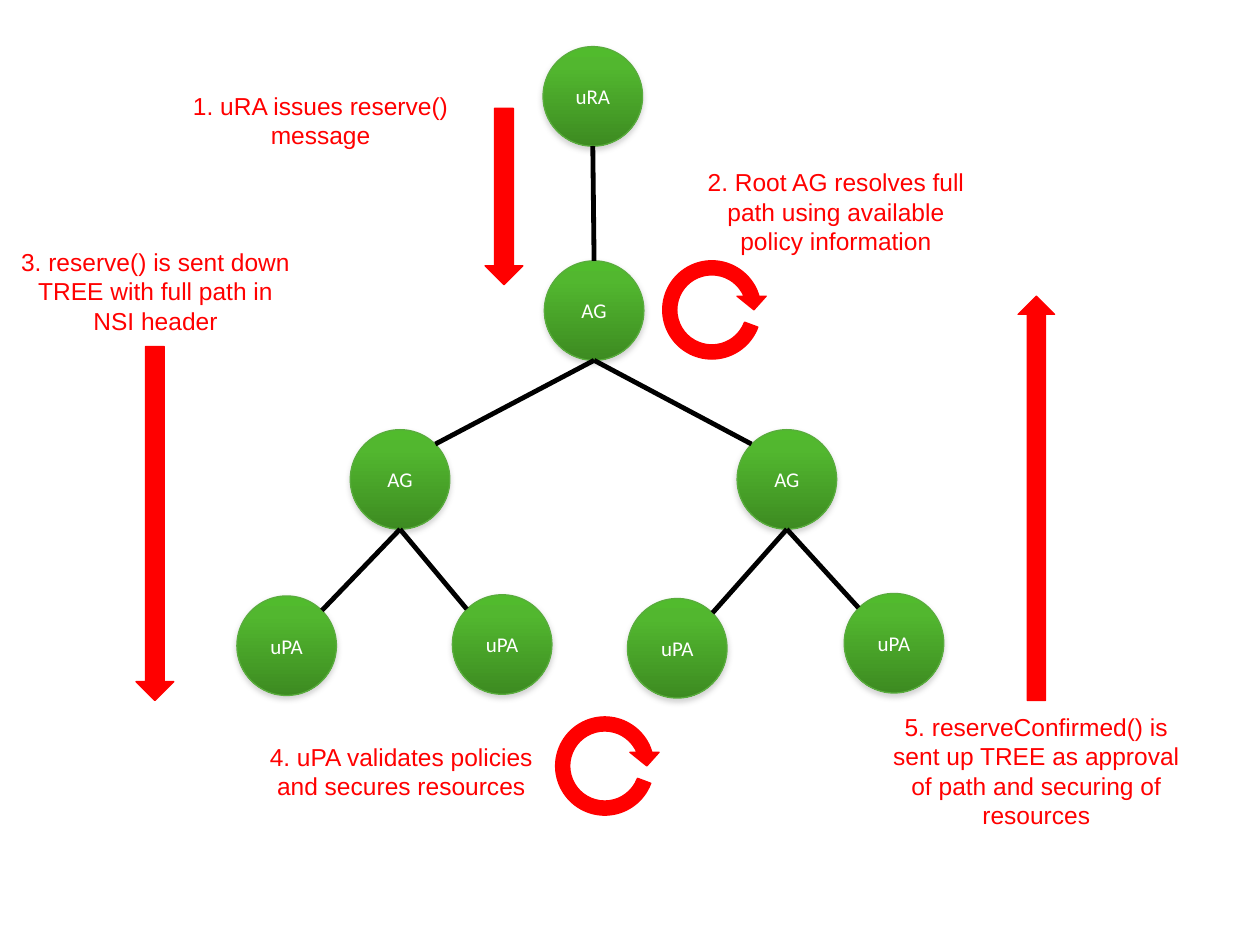
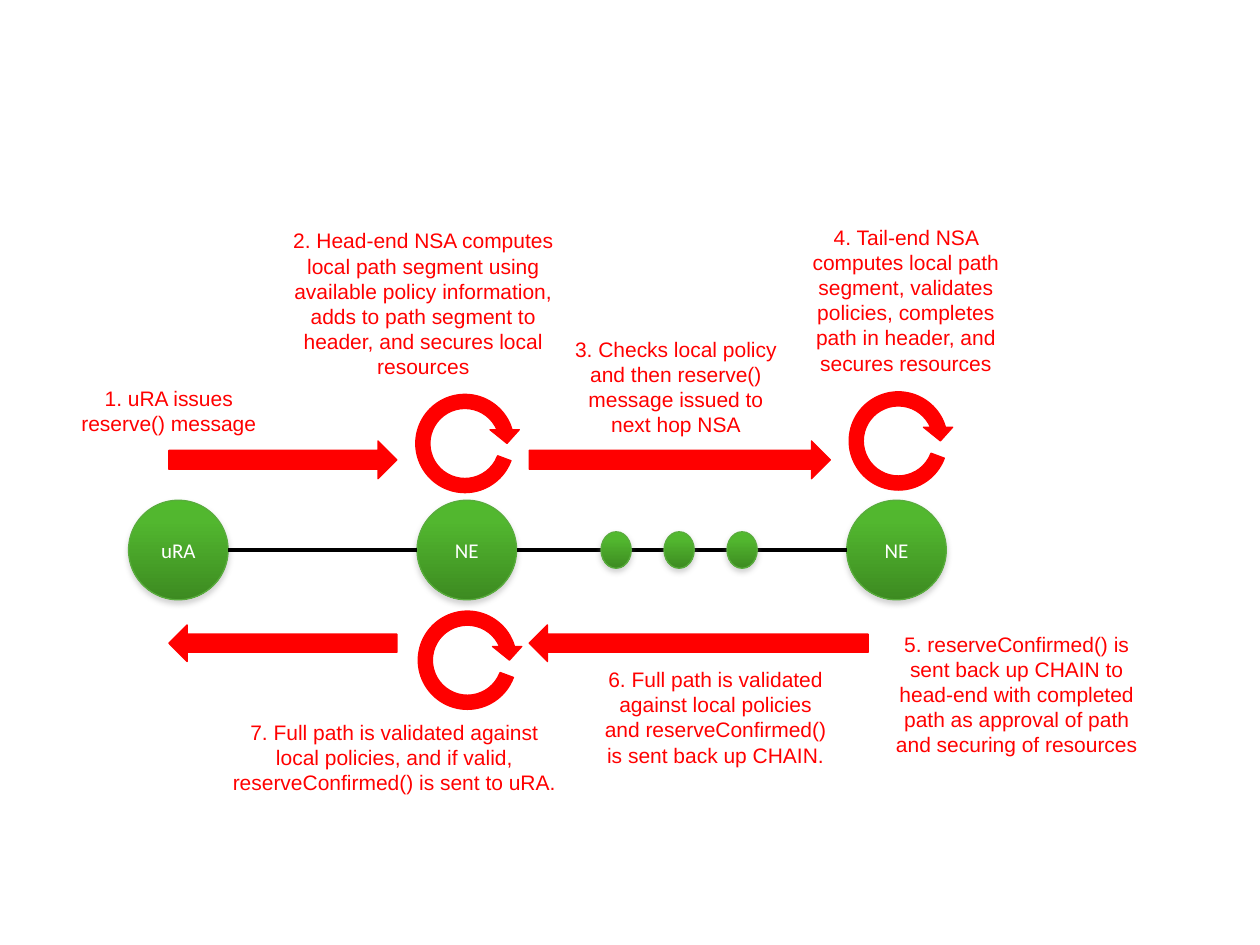
import copy

import lxml.etree
import pptx
import pptx.dml.color
import pptx.enum.shapes
import pptx.enum.text
import pptx.oxml
import pptx.oxml.ns
import pptx.util

Inches = pptx.util.Inches
Pt = pptx.util.Pt
RGBColor = pptx.dml.color.RGBColor
MSO_SHAPE = pptx.enum.shapes.MSO_SHAPE
MSO_CONNECTOR = pptx.enum.shapes.MSO_CONNECTOR
PP_ALIGN = pptx.enum.text.PP_ALIGN
qn = pptx.oxml.ns.qn

RED = RGBColor(0xFF, 0x00, 0x00)
BLACK = RGBColor(0x00, 0x00, 0x00)
WHITE = RGBColor(0xFF, 0xFF, 0xFF)
EDGE = RGBColor(0x59, 0xAC, 0x3D)
GREENS = [
    (0, RGBColor(0x51, 0xBB, 0x2D)),
    (0.2, RGBColor(0x52, 0xB7, 0x2F)),
    (1, RGBColor(0x3D, 0x8B, 0x21)),
]

NODE = 0.79
LOOP = 0.9
DIAG = NODE / 2 * 0.71
LOOP_ADJ = (0.125, 11.423, 204.577, 12.305, 0.129)
SHADOW = (
    f'<a:effectLst {pptx.oxml.ns.nsdecls("a")}>'
    '<a:outerShdw blurRad="40000" dist="23000" dir="5400000" rotWithShape="0">'
    '<a:srgbClr val="808080"><a:alpha val="35000"/></a:srgbClr>'
    '</a:outerShdw></a:effectLst>'
)


def add_shape(slide, kind, x, y, w, h, edge):
    shape = slide.shapes.add_shape(kind, Inches(x), Inches(y), Inches(w), Inches(h))
    shape.line.color.rgb = edge
    shape.line.width = Pt(0.75)
    return shape


def add_ball(slide, x, y, w=NODE, h=NODE):
    """Add a green shaded ellipse with a soft shadow."""
    ball = add_shape(slide, MSO_SHAPE.OVAL, x, y, w, h, EDGE)
    ball.fill.gradient()
    ball.fill.gradient_angle = 270
    props = ball._element.spPr
    stops = props.find(qn("a:gradFill")).find(qn("a:gsLst"))
    stops.insert(1, copy.deepcopy(stops[0]))
    for stop, (place, color) in zip(ball.fill.gradient_stops, GREENS):
        stop.position = place
        stop.color.rgb = color
    props.append(pptx.oxml.parse_xml(SHADOW))
    return ball


def add_node(slide, name, x, y):
    """Add a named ball and return its centre."""
    ball = add_ball(slide, x, y)
    para = ball.text_frame.paragraphs[0]
    para.text = name
    para.alignment = PP_ALIGN.CENTER
    para.font.name = "Calibri"
    para.font.size = Pt(12)
    para.font.color.rgb = WHITE
    return x + NODE / 2, y + NODE / 2


def add_link(slide, start, end):
    ends = [Inches(v) for v in (*start, *end)]
    link = slide.shapes.add_connector(MSO_CONNECTOR.STRAIGHT, *ends)
    link.line.color.rgb = BLACK
    link.line.width = Pt(2.75)
    lxml.etree.SubElement(link._element.spPr, qn("a:effectLst"))


def add_arrow(slide, kind, x, y, w, h, adjust=(0.5, 0.5)):
    arrow = add_shape(slide, kind, x, y, w, h, RED)
    for i, value in enumerate(adjust):
        arrow.adjustments[i] = value
    arrow.fill.solid()
    arrow.fill.fore_color.rgb = RED
    arrow.shadow.inherit = False


def add_loop(slide, x, y):
    add_arrow(slide, MSO_SHAPE.CIRCULAR_ARROW, x, y, LOOP, LOOP, LOOP_ADJ)


def add_label(slide, text, x, y, w, h, size):
    box = slide.shapes.add_textbox(Inches(x), Inches(y), Inches(w), Inches(h))
    frame = box.text_frame
    frame.word_wrap = True
    frame.auto_size = pptx.enum.text.MSO_AUTO_SIZE.SHAPE_TO_FIT_TEXT
    para = frame.paragraphs[0]
    para.text = text
    para.alignment = PP_ALIGN.CENTER
    para.font.name = "Arial"
    para.font.size = Pt(size)
    para.font.color.rgb = RED


def branch(slide, top, kids):
    """Link the foot of a node to the upper inner side of each child."""
    x, y = top
    for kid_x, kid_y in kids:
        side = DIAG if kid_x < x else -DIAG
        add_link(slide, (x, y + NODE / 2), (kid_x + side, kid_y - DIAG))


def draw_tree(slide):
    user = add_node(slide, "uRA", 4.31, 0.37)
    root = add_node(slide, "AG", 4.32, 2.07)
    left = add_node(slide, "AG", 2.78, 3.41)
    right = add_node(slide, "AG", 5.85, 3.41)
    leaves = [
        add_node(slide, "uPA", x, y)
        for x, y in [(1.88, 4.73), (3.59, 4.72), (4.98, 4.75), (6.7, 4.71)]
    ]
    add_link(slide, (user[0], user[1] + NODE / 2), (root[0], root[1] - NODE / 2))
    branch(slide, root, [left, right])
    branch(slide, left, leaves[:2])
    branch(slide, right, leaves[2:])

    add_arrow(slide, MSO_SHAPE.DOWN_ARROW, 3.85, 0.86, 0.3, 1.4)
    add_arrow(slide, MSO_SHAPE.DOWN_ARROW, 1.08, 2.75, 0.3, 2.81)
    add_arrow(slide, MSO_SHAPE.UP_ARROW, 8.08, 2.35, 0.29, 3.21)
    add_loop(slide, 5.2, 2.01)
    add_loop(slide, 4.35, 5.63)

    for text, *place in [
        ("1. uRA issues reserve() message", 1.33, 0.67, 2.43, 0.57),
        ("2. Root AG resolves full path using available policy information",
         5.42, 1.28, 2.43, 0.81),
        ("3. reserve() is sent down TREE with full path in NSI header",
         0.02, 1.91, 2.43, 0.81),
        ("4. uPA validates policies and secures resources",
         1.91, 5.84, 2.55, 0.57),
        ("5. reserveConfirmed() is sent up TREE as approval of path and "
         "securing of resources", 6.9, 5.6, 2.65, 1.04),
    ]:
        add_label(slide, text, *place, 14)


def draw_chain(slide):
    row = 3.97
    nodes = [
        add_node(slide, name, x, row)
        for name, x in [("uRA", 1.02), ("NE", 3.31), ("NE", 6.72)]
    ]
    for (x, y), (next_x, _) in zip(nodes, nodes[1:]):
        add_link(slide, (x + NODE / 2, y), (next_x - NODE / 2, y))
    for i in range(3):
        add_ball(slide, 4.77 + 0.5 * i, 4.22, 0.24, 0.29)

    for x, out, back in [(1.34, 1.81, 1.81), (4.2, 2.39, 2.69)]:
        add_arrow(slide, MSO_SHAPE.RIGHT_ARROW, x, 3.5, out, 0.3)
        add_arrow(slide, MSO_SHAPE.LEFT_ARROW, x, 4.96, back, 0.29)
    for x, y in [(3.24, 3.07), (6.68, 3.05), (3.26, 4.79)]:
        add_loop(slide, x, y)

    for text, *place in [
        ("1. uRA issues reserve() message", 0.42, 3.01, 1.84, 0.5),
        ("2. Head-end NSA computes local path segment using available policy "
         "information, adds to path segment to header, and secures local "
         "resources", 2.21, 1.76, 2.3, 1.31),
        ("3. Checks local policy and then reserve() message issued to next "
         "hop NSA", 4.46, 2.62, 1.81, 0.91),
        ("4. Tail-end NSA computes local path segment, validates policies, "
         "completes path in header, and secures resources",
         6.24, 1.73, 1.9, 1.31),
        ("5. reserveConfirmed() is sent back up CHAIN to head-end with "
         "completed path as approval of path and securing of resources",
         6.95, 4.96, 2.24, 1.11),
        ("6. Full path is validated against local policies and "
         "reserveConfirmed() is sent back up CHAIN.", 4.68, 5.24, 2, 0.91),
        ("7. Full path is validated against local policies, and if valid, "
         "reserveConfirmed() is sent to uRA.", 1.72, 5.66, 2.82, 0.71),
    ]:
        add_label(slide, text, *place, 12)


def main():
    deck = pptx.Presentation()
    deck.slide_width = Inches(10)
    deck.slide_height = Inches(7.5)
    for draw in (draw_tree, draw_chain):
        draw(deck.slides.add_slide(deck.slide_layouts[6]))
    deck.save("out.pptx")


if __name__ == "__main__":
    main()
